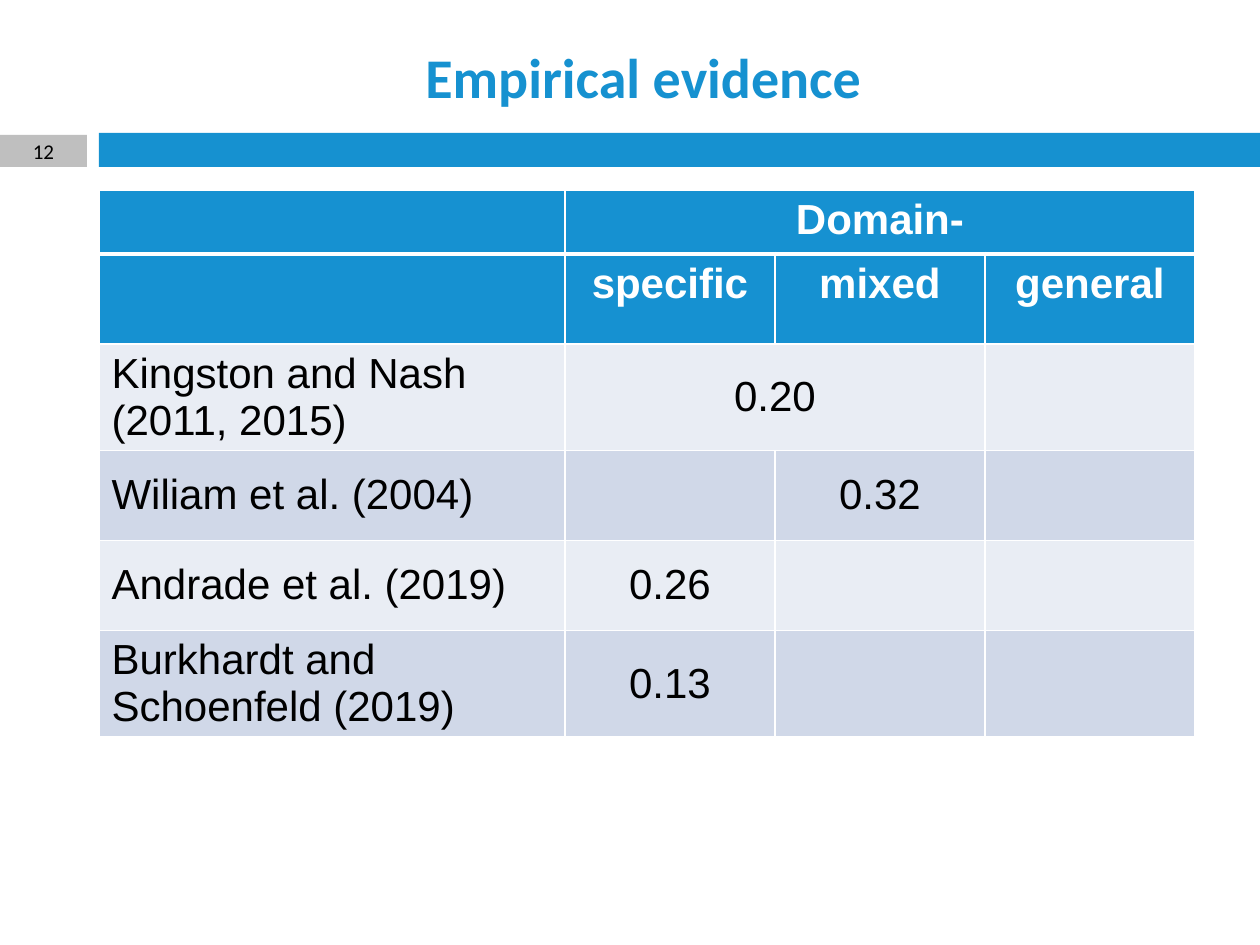
from dataclasses import dataclass

from lxml.etree import SubElement
from pptx import Presentation
from pptx.dml.color import RGBColor
from pptx.enum.shapes import MSO_SHAPE
from pptx.enum.text import MSO_ANCHOR, PP_ALIGN
from pptx.oxml.ns import qn
from pptx.util import Emu, Pt

TITLE = "Empirical evidence"
PAGE = "12"
# None continues the cell to its left
ROWS = [
    ["", "Domain-", None, None],
    ["", "specific", "mixed", "general"],
    ["Kingston and Nash (2011, 2015)", "0.20", None, ""],
    ["Wiliam et al. (2004)", "", "0.32", ""],
    ["Andrade et al. (2019)", "0.26", "", ""],
    ["Burkhardt and Schoenfeld (2019)", "0.13", "", ""],
]
HEADER_ROWS = 2
COL_WIDTHS = [466, 210, 210, 210]
ROW_HEIGHTS = [64] + [90] * 5


@dataclass(frozen=True)
class Theme:
    bar: str = "1691D0"
    tab: str = "BFBFBF"
    header: str = "1691D1"
    bands: tuple = ("E9EDF4", "D0D8E8")
    white: str = "FFFFFF"
    black: str = "000000"
    heading_font: str = "Calibri"
    table_font: str = "Arial"
    title_size: int = 32
    table_size: int = 24
    page_size: int = 12


THEME = Theme()


def px(n):
    return Emu(round(n * 914400 / 126))


def write(tf, text, font, size, color, bold=False, align=PP_ALIGN.CENTER):
    p = tf.paragraphs[0]
    p.alignment = align
    r = p.add_run()
    r.text = text
    r.font.name, r.font.size, r.font.bold = font, Pt(size), bold
    r.font.color.rgb = RGBColor.from_string(color)


def add_rect(slide, box, color):
    s = slide.shapes.add_shape(MSO_SHAPE.RECTANGLE, *map(px, box))
    s.shadow.inherit = False
    s.fill.solid()
    s.fill.fore_color.rgb = RGBColor.from_string(color)
    s.line.fill.background()
    return s


def add_borders(cell, **widths):
    tcPr = cell._tc.get_or_add_tcPr()
    for side in "LRTB":
        ln = SubElement(tcPr, qn(f"a:ln{side}"), w=str(Pt(widths.get(side, 1))))
        fill = SubElement(ln, qn("a:solidFill"))
        SubElement(fill, qn("a:srgbClr"), val=THEME.white)


def style_cell(cell, row, col, text):
    is_header = row < HEADER_ROWS
    add_borders(cell, **({"B": 3} if row == 0 else {"T": 3} if row == 1 else {}))
    cell.fill.solid()
    color = THEME.header if is_header else THEME.bands[(row - HEADER_ROWS) % 2]
    cell.fill.fore_color.rgb = RGBColor.from_string(color)
    cell.vertical_anchor = MSO_ANCHOR.TOP if is_header else MSO_ANCHOR.MIDDLE
    if text:
        write(cell.text_frame, text, THEME.table_font, THEME.table_size,
              THEME.white if is_header else THEME.black, is_header,
              PP_ALIGN.CENTER if col else PP_ALIGN.LEFT)


def add_evidence_table(slide, left, top):
    frame = slide.shapes.add_table(
        len(ROWS), len(COL_WIDTHS), px(left), px(top),
        px(sum(COL_WIDTHS)), px(sum(ROW_HEIGHTS)))
    table = frame.table
    for column, width in zip(table.columns, COL_WIDTHS):
        column.width = px(width)
    for row, height in zip(table.rows, ROW_HEIGHTS):
        row.height = px(height)
    for i, row in enumerate(ROWS):
        for j, text in enumerate(row):
            style_cell(table.cell(i, j), i, j, text)
        if None in row:
            start = row.index(None) - 1
            table.cell(i, start).merge(table.cell(i, start + row.count(None)))


def main():
    prs = Presentation()
    prs.slide_width, prs.slide_height = px(1260), px(945)
    slide = prs.slides.add_slide(prs.slide_layouts[5])

    title = slide.shapes.title
    title.left, title.top, title.width, title.height = map(px, (98, 33, 1091, 86))
    title.text_frame.vertical_anchor = MSO_ANCHOR.MIDDLE
    write(title.text_frame, TITLE, THEME.heading_font, THEME.title_size, THEME.bar, True)

    add_rect(slide, (99, 133, 1161, 34), THEME.bar)
    tab = add_rect(slide, (0, 135, 87, 32), THEME.tab)
    tab.text_frame.vertical_anchor = MSO_ANCHOR.MIDDLE
    write(tab.text_frame, PAGE, THEME.heading_font, THEME.page_size, THEME.black)

    add_evidence_table(slide, 99, 190)
    prs.save("out.pptx")


if __name__ == "__main__":
    main()
